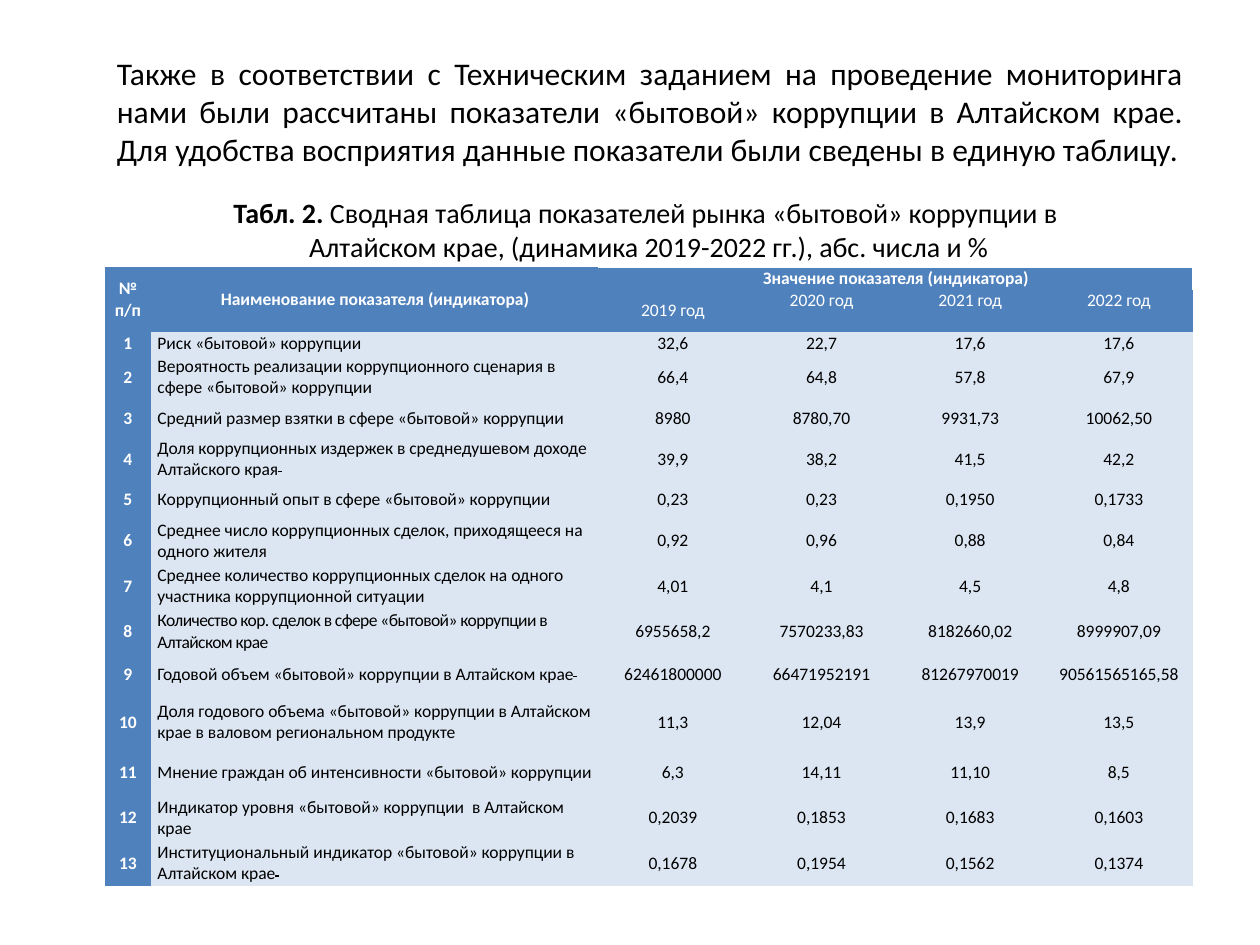
from lxml.etree import SubElement
from pptx import Presentation
from pptx.dml.color import RGBColor
from pptx.enum.text import MSO_ANCHOR as Anchor, PP_ALIGN as Align
from pptx.oxml.ns import qn
from pptx.util import Inches, Pt

COLORS = {"text": "000000", "light": "FFFFFF", "head": "4F81BD", "body": "DCE6F2"}
NO_STYLE_NO_GRID = "{2D5ABB26-0587-4C30-8999-92F81FD0307C}"

INTRO = (
    "Также в соответствии с Техническим заданием на проведение мониторинга нами были "
    "рассчитаны показатели «бытовой» коррупции в Алтайском крае. Для удобства восприятия "
    "данные показатели были сведены в единую таблицу."
)
CAPTION_NUMBER = "Табл. 2. "
CAPTION_LINES = [
    "Сводная таблица показателей рынка «бытовой» коррупции в ",
    "Алтайском крае, (динамика 2019-2022 гг.), абс. числа и %",
]
YEARS = ["2019 год", "2020 год", "2021 год", "2022 год"]

# Indicator, values by year, row height
INDICATORS = [
    ("Риск «бытовой» коррупции",
     ["32,6", "22,7", "17,6", "17,6"], 0.18),
    ("Вероятность реализации коррупционного сценария в сфере «бытовой» коррупции",
     ["66,4", "64,8", "57,8", "67,9"], 0.36),
    ("Средний размер взятки в сфере «бытовой» коррупции",
     ["8980", "8780,70", "9931,73", "10062,50"], 0.29),
    ("Доля коррупционных издержек в среднедушевом доходе Алтайского края",
     ["39,9", "38,2", "41,5", "42,2"], 0.36),
    ("Коррупционный опыт в сфере «бытовой» коррупции",
     ["0,23", "0,23", "0,1950", "0,1733"], 0.29),
    ("Среднее число коррупционных сделок, приходящееся на одного жителя",
     ["0,92", "0,96", "0,88", "0,84"], 0.36),
    ("Среднее количество коррупционных сделок на одного участника коррупционной ситуации",
     ["4,01", "4,1", "4,5", "4,8"], 0.36),
    ("Количество кор. сделок в сфере «бытовой» коррупции в Алтайском крае",
     ["6955658,2", "7570233,83", "8182660,02", "8999907,09"], 0.36),
    ("Годовой объем «бытовой» коррупции в Алтайском крае",
     ["62461800000", "66471952191", "81267970019", "90561565165,58"], 0.32),
    ("Доля годового объема «бытовой» коррупции в Алтайском крае "
     "в валовом региональном продукте",
     ["11,3", "12,04", "13,9", "13,5"], 0.44),
    ("Мнение граждан об интенсивности «бытовой» коррупции",
     ["6,3", "14,11", "11,10", "8,5"], 0.36),
    ("Индикатор уровня «бытовой» коррупции  в Алтайском крае",
     ["0,2039", "0,1853", "0,1683", "0,1603"], 0.36),
    ("Институциональный индикатор «бытовой» коррупции в Алтайском крае",
     ["0,1678", "0,1954", "0,1562", "0,1374"], 0.36),
]
STRUCK_TAIL = {4, 9, 13}  # indicators followed by a struck-out space
TIGHT = {8}  # indicators with condensed letters
HEADER_HEIGHTS = [0.18, 0.19]
COLUMN_WIDTHS = [0.37, 3.55] + [1.18] * len(YEARS)


def add_text(paragraph, text, size=10, color="text", bold=False, align=Align.CENTER,
             strike=False, spacing=None):
    paragraph.alignment = align
    run = paragraph.add_run()
    run.text = text
    font = run.font
    font.name, font.size, font.bold = "Calibri", Pt(size), bold
    font.color.rgb = RGBColor.from_string(COLORS[color])
    properties = run._r.get_or_add_rPr()
    if strike:
        properties.set("strike", "sngStrike")
    if spacing is not None:
        properties.set("spc", str(round(spacing * 100)))


class SlideBuilder:
    def __init__(self, slide):
        self.slide = slide

    def text_box(self, left, top, width, height, anchor=Anchor.TOP):
        box = self.slide.shapes.add_textbox(*map(Inches, (left, top, width, height)))
        frame = box.text_frame
        frame.word_wrap = True
        frame.vertical_anchor = anchor
        return frame

    def table(self, left, top, widths, heights):
        frame = self.slide.shapes.add_table(
            len(heights), len(widths),
            *map(Inches, (left, top, sum(widths), sum(heights))))
        table = frame.table
        table.first_row = table.horz_banding = False
        table._tbl.tblPr.find(qn("a:tableStyleId")).text = NO_STYLE_NO_GRID
        for column, width in zip(table.columns, widths):
            column.width = Inches(width)
        for row, height in zip(table.rows, heights):
            row.height = Inches(height)
        return table

    def cell(self, cell, text, fill="body", anchor=Anchor.MIDDLE, **text_format):
        cell.margin_left = cell.margin_right = Inches(0.05)
        cell.margin_top = cell.margin_bottom = 0
        cell.vertical_anchor = anchor
        cell.fill.solid()
        cell.fill.fore_color.rgb = RGBColor.from_string(COLORS[fill])
        paragraph = cell.text_frame.paragraphs[0]
        add_text(paragraph, text, **text_format)
        return paragraph

    def head_cell(self, cell, text, bold=True, **cell_format):
        self.cell(cell, text, fill="head", color="light", bold=bold, **cell_format)

    def cell_border(self, cell, *sides):
        properties = cell._tc.get_or_add_tcPr()
        for position, side in enumerate(sides):
            line = SubElement(properties, qn(f"a:{side}"), w=str(Pt(1)))
            fill = SubElement(line, qn("a:solidFill"))
            SubElement(fill, qn("a:srgbClr"), val=COLORS["light"])
            properties.insert(position, line)  # borders come before the fill


def main():
    deck = Presentation()
    deck.slide_width, deck.slide_height = Inches(10), Inches(7.5)
    builder = SlideBuilder(deck.slides.add_slide(deck.slide_layouts[6]))

    # Table caption
    caption = builder.text_box(0.82, 1.5, 8.66, 0.64, anchor=Anchor.MIDDLE)
    first_line, second_line = caption.paragraphs[0], caption.add_paragraph()
    add_text(first_line, CAPTION_NUMBER, size=16, bold=True)
    for line, text in zip((first_line, second_line), CAPTION_LINES):
        add_text(line, text, size=16)

    # Introduction
    intro = builder.text_box(0.83, 0.38, 8.66, 1.01)
    add_text(intro.paragraphs[0], INTRO, size=18, align=Align.JUSTIFY)

    # Table header
    heights = HEADER_HEIGHTS + [height for _, _, height in INDICATORS]
    summary = builder.table(0.83, 2.12, COLUMN_WIDTHS, heights)
    for column, heading in enumerate(["№ п/п", "Наименование показателя (индикатора)"]):
        summary.cell(0, column).merge(summary.cell(1, column))
        builder.head_cell(summary.cell(0, column), heading)
    values_heading = summary.cell(0, 2)
    values_heading.merge(summary.cell(0, len(COLUMN_WIDTHS) - 1))
    builder.head_cell(values_heading, "Значение показателя (индикатора)")
    builder.cell_border(values_heading, "lnR", "lnT")
    for column, year in enumerate(YEARS, start=2):
        anchor = Anchor.MIDDLE if column == 2 else Anchor.TOP
        builder.head_cell(summary.cell(1, column), year, bold=False, anchor=anchor)

    # Indicators
    for number, (indicator, values, _) in enumerate(INDICATORS, start=1):
        row = number + len(HEADER_HEIGHTS) - 1
        builder.head_cell(summary.cell(row, 0), str(number))
        label = builder.cell(summary.cell(row, 1), indicator, align=Align.LEFT,
                             spacing=-0.3 if number in TIGHT else None)
        if number in STRUCK_TAIL:
            add_text(label, " ", align=Align.LEFT, strike=True)
        for column, value in enumerate(values, start=2):
            builder.cell(summary.cell(row, column), value)

    deck.save("out.pptx")


if __name__ == "__main__":
    main()
